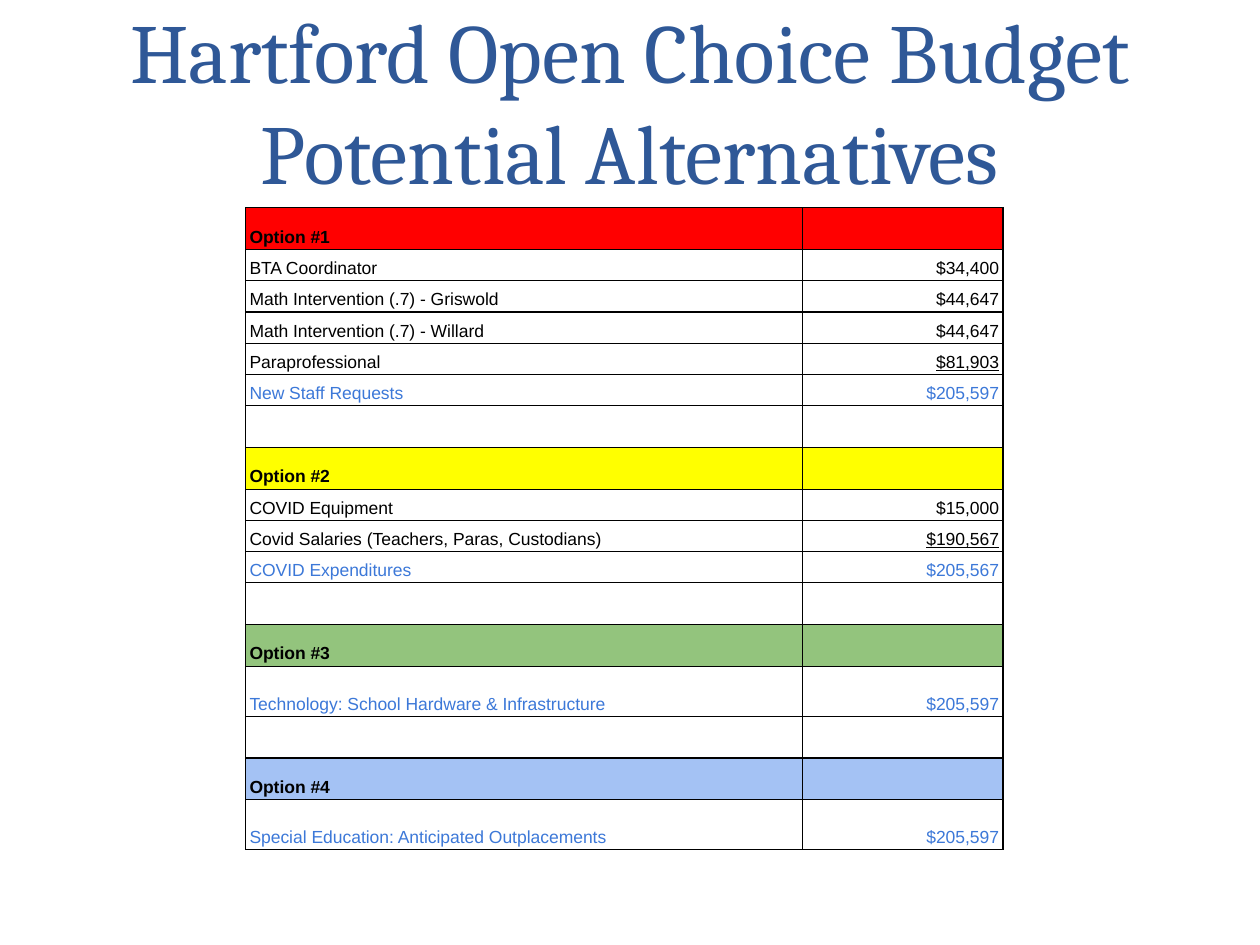
from dataclasses import dataclass
from pptx import Presentation
from pptx.dml.color import RGBColor as Rgb
from pptx.enum.text import MSO_ANCHOR as Anchor, MSO_AUTO_SIZE as Fit, PP_ALIGN as Align
from pptx.oxml import parse_xml
from pptx.oxml.ns import nsdecls
from pptx.util import Cm, Pt


@dataclass(frozen=True)
class Theme:
    """Hold the colours, fonts and type sizes."""
    title: str = "2F5897"
    ink: str = "000000"
    total: str = "3C78D8"
    paper: str = "FFFFFF"
    red: str = "FF0000"
    yellow: str = "FFFF00"
    green: str = "93C47D"
    blue: str = "A4C2F4"
    serif: str = "Cambria"
    sans: str = "Arial"
    big: int = 48
    small: int = 10
    rule: float = 0.75


THEME = Theme()
TITLE = "Hartford Open Choice Budget Potential Alternatives"
OPTIONS = [
    ("Option #1", THEME.red,
     [("BTA Coordinator", "$34,400"),
      ("Math Intervention (.7) - Griswold", "$44,647"),
      ("Math Intervention (.7) - Willard", "$44,647"),
      ("Paraprofessional", "$81,903")],
     ("New Staff Requests", "$205,597")),
    ("Option #2", THEME.yellow,
     [("COVID Equipment", "$15,000"),
      ("Covid Salaries (Teachers, Paras, Custodians)", "$190,567")],
     ("COVID Expenditures", "$205,567")),
    ("Option #3", THEME.green, [],
     ("Technology: School Hardware & Infrastructure", "$205,597")),
    ("Option #4", THEME.blue, [],
     ("Special Education: Anticipated Outplacements", "$205,597")),
]
HEAD, ITEM, LONE = 0.84, 0.63, 1.01


def write(frame, text, font=THEME.sans, size=THEME.small, color=THEME.ink,
          bold=False, under=False, align=Align.LEFT, space=None):
    """Put one formatted run of text in a frame."""
    para = frame.paragraphs[0]
    para.alignment = align
    para.line_spacing = space
    run = para.add_run()
    run.text = text
    face = run.font
    face.name, face.size = font, Pt(size)
    face.bold, face.underline = bold, under
    face.color.rgb = Rgb.from_string(color)


def edge(cell):
    """Draw a thin line on all four sides of a cell."""
    props = cell._tc.get_or_add_tcPr()
    for spot, side in enumerate(("lnL", "lnR", "lnT", "lnB")):
        props.insert(spot, parse_xml(
            f'<a:{side} {nsdecls("a")} w="{Pt(THEME.rule)}"><a:solidFill>'
            f'<a:srgbClr val="{THEME.ink}"/></a:solidFill></a:{side}>'))


def plan():
    """List each row as height, fill, label, amount and format."""
    rows = []
    for name, fill, items, total in OPTIONS:
        if rows:
            rows.append((HEAD, THEME.paper, ("", ""), {}, False))
        rows.append((HEAD, fill, (name, ""), {"bold": True}, False))
        for num, item in enumerate(items, 1):
            rows.append((ITEM, THEME.paper, item, {}, num == len(items)))
        high = ITEM if items else LONE
        rows.append((high, THEME.paper, total, {"color": THEME.total}, False))
    return rows


def add_title(slide, left, top, width, height):
    """Place and format the title."""
    shape = slide.shapes.title
    shape.left, shape.top = Cm(left), Cm(top)
    shape.width, shape.height = Cm(width), Cm(height)
    frame = shape.text_frame
    frame.auto_size, frame.word_wrap = Fit.NONE, True
    frame.vertical_anchor = Anchor.MIDDLE
    write(frame, TITLE, font=THEME.serif, size=THEME.big,
          color=THEME.title, align=Align.CENTER)


def add_budget(slide, left, top, width):
    """Build the table of options and their costs."""
    rows = plan()
    high = sum(row[0] for row in rows)
    table = slide.shapes.add_table(
        len(rows), 2, Cm(left), Cm(top), Cm(width), Cm(high)).table
    table.first_row = table.horz_banding = False
    for col, share in zip(table.columns, (0.735, 0.265)):
        col.width = Cm(width * share)
    for line, (tall, fill, texts, style, under) in zip(table.rows, rows):
        line.height = Cm(tall)
        sides = (Align.LEFT, False), (Align.RIGHT, under)
        for cell, text, (align, mark) in zip(line.cells, texts, sides):
            cell.fill.solid()
            cell.fill.fore_color.rgb = Rgb.from_string(fill)
            cell.margin_left = cell.margin_right = Cm(0.08)
            cell.margin_top = cell.margin_bottom = Cm(0.05)
            cell.vertical_anchor = Anchor.BOTTOM
            edge(cell)
            write(cell.text_frame, text, align=align, under=mark,
                  space=1.15, **style)


def main():
    """Make the slide and save it."""
    deck = Presentation()
    deck.slide_width, deck.slide_height = Cm(25.4), Cm(19.05)
    slide = deck.slides.add_slide(deck.slide_layouts[5])
    add_title(slide, 1.27, 0.43, 22.86, 3.18)
    add_budget(slide, 4.95, 4.19, 15.27)
    deck.save("out.pptx")


if __name__ == "__main__":
    main()
